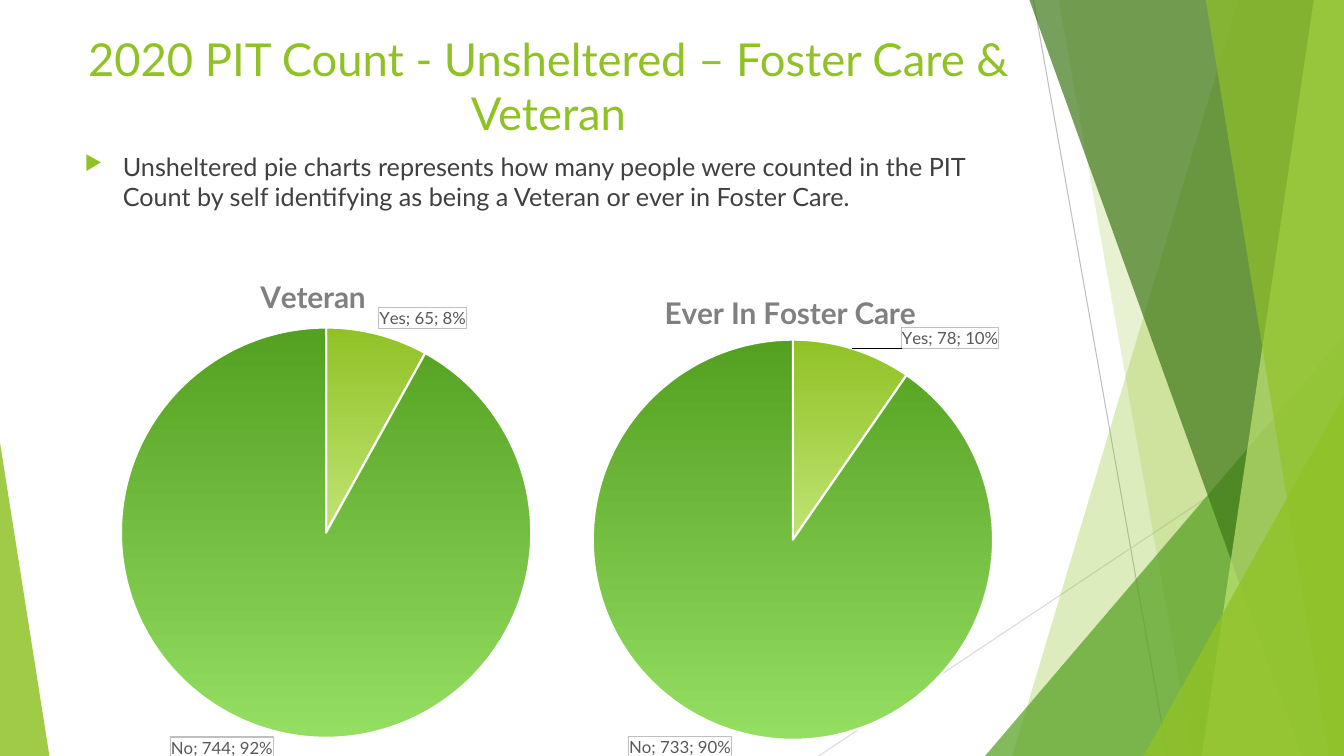
"""Build the slide on unsheltered people: foster care and veteran counts."""
import lxml.etree
import pptx
import pptx.chart.data
import pptx.dml.color
import pptx.enum.chart
import pptx.enum.shapes
import pptx.enum.text
import pptx.oxml
import pptx.oxml.ns
import pptx.util

Inches = pptx.util.Inches
Pt = pptx.util.Pt
RGBColor = pptx.dml.color.RGBColor
qn = pptx.oxml.ns.qn
LIME = RGBColor(0x90, 0xC2, 0x26)
PALE = RGBColor(0xC0, 0xE4, 0x74)
GREEN = RGBColor(0x54, 0xA0, 0x21)
MINT = RGBColor(0x94, 0xDE, 0x61)
DARK = RGBColor(0x3F, 0x78, 0x19)
WHITE = RGBColor(0xFF, 0xFF, 0xFF)
SILVER = RGBColor(0xBF, 0xBF, 0xBF)
LIGHT = RGBColor(0xD9, 0xD9, 0xD9)
GRAY = RGBColor(0x80, 0x80, 0x80)
SLATE = RGBColor(0x59, 0x59, 0x59)
INK = RGBColor(0x40, 0x40, 0x40)
FONT = "Lato"
WIDTH, HEIGHT = 13.33, 7.5


def style(font, size, color, bold=False):
    font.name = FONT
    font.size = Pt(size)
    font.bold = bold
    font.color.rgb = color


def layout(**parts):
    node = lxml.etree.Element(qn("c:layout"))
    manual = lxml.etree.SubElement(node, qn("c:manualLayout"))
    for name, value in parts.items():
        lxml.etree.SubElement(manual, qn("c:" + name)).set("val", str(value))
    return node


deck = pptx.Presentation()
deck.slide_width = Inches(WIDTH)
deck.slide_height = Inches(HEIGHT)
slide = deck.slides.add_slide(deck.slide_layouts[6])
shapes = slide.shapes

for x1, y1, x2, y2, color in [
    (10.25, 0, 11.58, HEIGHT, SILVER),
    (WIDTH, 4.03, 8.12, HEIGHT, LIGHT),
]:
    line = shapes.add_connector(
        pptx.enum.shapes.MSO_CONNECTOR.STRAIGHT,
        Inches(x1), Inches(y1), Inches(x2), Inches(y2))
    line.line.color.rgb = color
    line.line.width = Pt(0.75)
    lxml.etree.SubElement(line._element.spPr, qn("a:effectLst"))

for kind, left, right, color, alpha in [
    ("band", 12.28, 10.04, LIME, 30),
    ("band", 10.5, 11.83, LIME, 20),
    (3.33, 9.77, WIDTH, GREEN, 72),
    ("band", 10.21, 12.91, DARK, 70),
    ("band", 13.03, 11.92, PALE, 70),
    ("band", 11.96, 13.18, LIME, 65),
    (3.93, 11.34, WIDTH, LIME, 80),
    (4.39, 0, 0.49, LIME, 85),
]:
    if kind == "band":
        form = shapes.build_freeform(Inches(left), 0)
        form.add_line_segments([
            (Inches(WIDTH), 0), (Inches(WIDTH), Inches(HEIGHT)),
            (Inches(right), Inches(HEIGHT))], close=True)
        shard = form.convert_to_shape()
    else:
        shard = shapes.add_shape(
            pptx.enum.shapes.MSO_SHAPE.ISOSCELES_TRIANGLE,
            Inches(left), Inches(kind), Inches(right - left), Inches(HEIGHT - kind))
        shard.adjustments[0] = 1 if right == WIDTH else 0
    shard.shadow.inherit = False
    shard.fill.solid()
    shard.fill.fore_color.rgb = color
    shard.line.fill.background()
    tint = shard._element.spPr.find(qn("a:solidFill"))[0]
    lxml.etree.SubElement(tint, qn("a:alpha")).set("val", str(alpha * 1000))

for top, height, size, color, text in [
    (0.26, 0.6, 32.4, LIME, "2020 PIT Count - Unsheltered – Foster Care & Veteran"),
    (1.45, 0.73, 18, INK,
     "Unsheltered pie charts represents how many people were counted in the PIT "
     "Count by self identifying as being a Veteran or ever in Foster Care."),
]:
    box = shapes.add_textbox(Inches(0.74), Inches(top), Inches(9.4), Inches(height))
    box.text_frame.word_wrap = True
    para = box.text_frame.paragraphs[0]
    para.text = text
    if color == LIME:
        para.alignment = pptx.enum.text.PP_ALIGN.CENTER
    else:
        props = para._p.get_or_add_pPr()
        props.set("marL", str(Inches(0.38)))
        props.set("indent", str(-Inches(0.38)))
        tint = lxml.etree.SubElement(props, qn("a:buClr"))
        lxml.etree.SubElement(tint, qn("a:srgbClr")).set("val", str(LIME))
        lxml.etree.SubElement(props, qn("a:buSzPct")).set("val", "80000")
        lxml.etree.SubElement(props, qn("a:buChar")).set("char", "▶")
    style(para.runs[0].font, size, color)

FRAME = (
    f'<c:spPr {pptx.oxml.ns.nsdecls("c", "a")}>'
    f'<a:solidFill><a:srgbClr val="{WHITE}"/></a:solidFill>'
    f'<a:ln w="9525"><a:solidFill><a:srgbClr val="{SILVER}"/></a:solidFill></a:ln>'
    '</c:spPr>')

for name, counts, area, head, disc in [
    ("Ever In Foster Care", (78, 733), (3.16, 2.32, 9.36, 5.37),
     (6.54, 2.84), (5.88, 3.37, 3.97)),
    ("Veteran", (65, 744), (-1.07, 2.18, 8.46, 5.52),
     (2.53, 2.68), (1.2, 3.25, 4.07)),
]:
    left, top, width, height = area
    data = pptx.chart.data.CategoryChartData()
    data.categories = ["Yes", "No"]
    data.add_series(name, counts)
    chart = shapes.add_chart(
        pptx.enum.chart.XL_CHART_TYPE.PIE, Inches(left), Inches(top),
        Inches(width), Inches(height), data).chart
    style(chart.font, 10, RGBColor(0, 0, 0))
    chart.has_legend = False
    chart.has_title = True
    title = chart.chart_title
    title.text_frame.text = name
    style(title.text_frame.paragraphs[0].runs[0].font, 21.3, GRAY, True)

    plot = chart.plots[0]
    plot.vary_by_categories = True
    series = plot.series[0]
    for index, colors in enumerate([(LIME, PALE), (GREEN, MINT)]):
        part = series.points[index].format
        part.fill.gradient()
        part.fill.gradient_angle = 270
        for stop, color in zip(part.fill.gradient_stops, colors):
            stop.color.rgb = color
        part.line.color.rgb = WHITE
        part.line.width = Pt(1.5)

    labels = series.data_labels
    labels.show_category_name = True
    labels.show_value = True
    labels.show_percentage = True
    labels.position = pptx.enum.chart.XL_LABEL_POSITION.OUTSIDE_END
    style(labels.font, 12, SLATE)
    labels._element.find(qn("c:txPr")).addprevious(pptx.oxml.parse_xml(FRAME))
    if name != "Veteran":
        label = series.points[0].data_label
        style(label.font, 12, SLATE)
        label.position = pptx.enum.chart.XL_LABEL_POSITION.OUTSIDE_END
        node = labels._element.find(qn("c:dLbl"))
        node.find(qn("c:idx")).addnext(layout(x=0.05, y=0.01))
        node.find(qn("c:txPr")).addprevious(pptx.oxml.parse_xml(FRAME))
        for flag in ("c:showCatName", "c:showVal", "c:showPercent"):
            node.find(qn(flag)).set("val", "1")

    for old in chart._chartSpace.xpath("c:chart/c:title/c:layout | c:chart/c:plotArea/c:layout"):
        old.getparent().remove(old)
    title._element.find(qn("c:tx")).addnext(layout(
        xMode="edge", yMode="edge",
        x=(head[0] - left) / width, y=(head[1] - top) / height))
    chart._chartSpace.xpath("c:chart/c:plotArea")[0].insert(0, layout(
        layoutTarget="inner", xMode="edge", yMode="edge",
        x=(disc[0] - left) / width, y=(disc[1] - top) / height,
        w=disc[2] / width, h=disc[2] / height))

deck.save("out.pptx")
